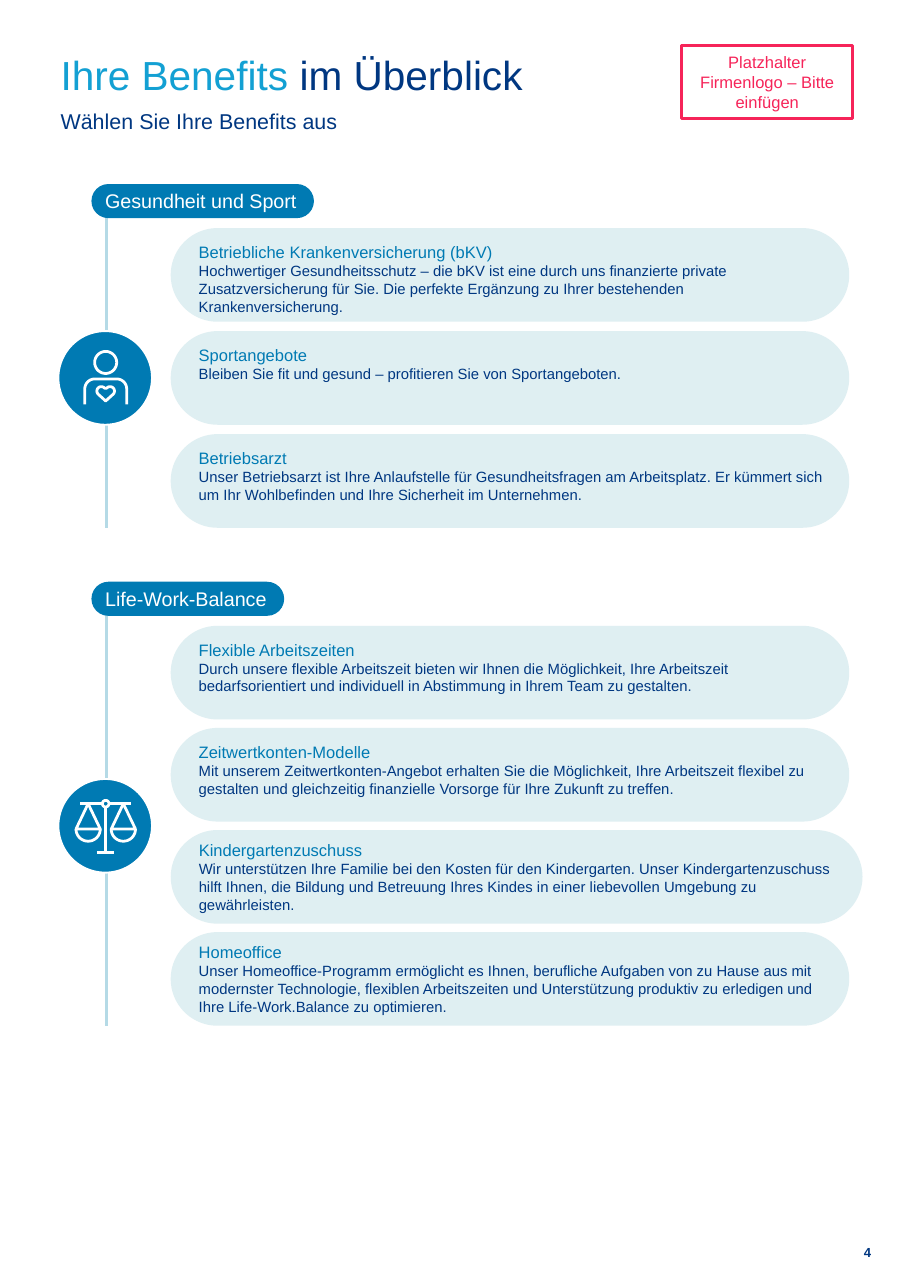
from math import cos, radians, sin

from lxml.etree import SubElement
from pptx import Presentation
from pptx.dml.color import RGBColor
from pptx.enum.shapes import MSO_CONNECTOR, MSO_SHAPE
from pptx.enum.text import MSO_ANCHOR, MSO_AUTO_SIZE, PP_ALIGN
from pptx.oxml.ns import qn
from pptx.util import Inches, Pt

NAVY, BLUE, SKY, WHITE = "003781", "007AB3", "13A0D3", "FFFFFF"
PALE, RAIL, PINK = "DFEFF2", "B5DAE6", "F62459"
CARD_WIDTH, CARD_HEIGHT = 6.16, 0.85

HEALTH_CARDS = [
    ("Betriebliche Krankenversicherung (bKV)",
     "Hochwertiger Gesundheitsschutz – die bKV ist eine durch uns finanzierte private "
     "Zusatzversicherung für Sie. Die perfekte Ergänzung zu Ihrer bestehenden "
     "Krankenversicherung.", CARD_WIDTH, MSO_ANCHOR.TOP),
    ("Sportangebote",
     "Bleiben Sie fit und gesund – profitieren Sie von Sportangeboten.",
     CARD_WIDTH, MSO_ANCHOR.TOP),
    ("Betriebsarzt",
     "Unser Betriebsarzt ist Ihre Anlaufstelle für Gesundheitsfragen am Arbeitsplatz. "
     "Er kümmert sich um Ihr Wohlbefinden und Ihre Sicherheit im Unternehmen.",
     CARD_WIDTH, MSO_ANCHOR.TOP),
]
BALANCE_CARDS = [
    ("Flexible Arbeitszeiten",
     "Durch unsere flexible Arbeitszeit bieten wir Ihnen die Möglichkeit, Ihre Arbeitszeit "
     "bedarfsorientiert und individuell in Abstimmung in Ihrem Team zu gestalten.",
     CARD_WIDTH, MSO_ANCHOR.TOP),
    ("Zeitwertkonten-Modelle",
     "Mit unserem Zeitwertkonten-Angebot erhalten Sie die Möglichkeit, Ihre Arbeitszeit "
     "flexibel zu gestalten und gleichzeitig finanzielle Vorsorge für Ihre Zukunft zu treffen.",
     CARD_WIDTH, MSO_ANCHOR.TOP),
    ("Kindergartenzuschuss",
     "Wir unterstützen Ihre Familie bei den Kosten für den Kindergarten. Unser "
     "Kindergartenzuschuss hilft Ihnen, die Bildung und Betreuung Ihres Kindes in einer "
     "liebevollen Umgebung zu gewährleisten.", 6.28, MSO_ANCHOR.MIDDLE),
    ("Homeoffice",
     "Unser Homeoffice-Programm ermöglicht es Ihnen, berufliche Aufgaben von zu Hause aus "
     "mit modernster Technologie, flexiblen Arbeitszeiten und Unterstützung produktiv zu "
     "erledigen und Ihre Life-Work.Balance zu optimieren.", CARD_WIDTH, MSO_ANCHOR.MIDDLE),
]


def color(value):
    """Turn a hex string into a colour."""
    return RGBColor.from_string(value)


def add_run(paragraph, text, size, hex_color, bold=False):
    """Append one formatted run to a paragraph."""
    run = paragraph.add_run()
    run.text = text
    run.font.name = "Arial"
    run.font.size = Pt(size)
    run.font.bold = bold
    run.font.color.rgb = color(hex_color)


def set_frame(frame, anchor, left=0, right=0, wrap=True):
    """Set anchor, side insets and wrapping, and return the first paragraph."""
    frame.auto_size = MSO_AUTO_SIZE.NONE
    frame.word_wrap = wrap
    frame.vertical_anchor = anchor
    frame.margin_left, frame.margin_right = Inches(left), Inches(right)
    frame.margin_top = frame.margin_bottom = 0
    paragraph = frame.paragraphs[0]
    paragraph.alignment = PP_ALIGN.LEFT
    return paragraph


def style(shape, fill=None, line=None, weight=1):
    """Apply fill and outline without a shadow."""
    shape.shadow.inherit = False
    if fill:
        shape.fill.solid()
        shape.fill.fore_color.rgb = color(fill)
    else:
        shape.fill.background()
    if line:
        shape.line.color.rgb = color(line)
        shape.line.width = Pt(weight)
    else:
        shape.line.fill.background()


def add_shape(slide, kind, left, top, width, height, **look):
    """Add a styled preset shape."""
    shape = slide.shapes.add_shape(kind, Inches(left), Inches(top), Inches(width), Inches(height))
    style(shape, **look)
    if kind == MSO_SHAPE.ROUNDED_RECTANGLE:
        shape.adjustments[0] = 0.5
    return shape


def arc(x, y, radius, start=0, end=360):
    """Return points along an arc, angles clockwise from the right."""
    angles = [radians(start + (end - start) * step / 36) for step in range(37)]
    return [(x + radius * cos(angle), y + radius * sin(angle)) for angle in angles]


def add_icon(slide, x, y, strokes):
    """Draw white outlines around a centre point."""
    for points, closed in strokes:
        corners = [(Inches(x + dx), Inches(y + dy)) for dx, dy in points]
        builder = slide.shapes.build_freeform(*corners[0])
        builder.add_line_segments(corners[1:], close=closed)
        style(builder.convert_to_shape(), line=WHITE, weight=1.8)


def person_strokes():
    """Return the outlines of a person with a heart."""
    body = [(-0.19, 0.24), *arc(-0.1, 0.1, 0.09, 180, 270),
            *arc(0.1, 0.1, 0.09, 270, 360), (0.19, 0.24)]
    heart = [*arc(-0.04, 0.12, 0.04, 135, 320), *arc(0.04, 0.12, 0.04, 220, 405), (0, 0.21)]
    return [(arc(0, -0.14, 0.1), True), (body, False), (heart, True)]


def scale_strokes():
    """Return the outlines of a balance scale."""
    strokes = [(arc(0, -0.2, 0.03), True), ([(0, -0.17), (0, 0.24)], False),
               ([(-0.08, 0.24), (0.08, 0.24)], False)]
    for side in (-1, 1):
        pan = side * 0.16
        strokes += [([(side * 0.03, -0.2), (side * 0.23, -0.2)], False),
                    ([(pan, -0.2), (pan - 0.11, 0.03), (pan + 0.11, 0.03)], True),
                    (arc(pan, 0.03, 0.11, 0, 180), False)]
    return strokes


def add_card(slide, left, top, card):
    """Add one benefit card with heading and description."""
    heading, description, width, anchor = card
    shape = add_shape(slide, MSO_SHAPE.ROUNDED_RECTANGLE, left, top, width, CARD_HEIGHT, fill=PALE)
    paragraph = set_frame(shape.text_frame, anchor, 0.13, 0.08)
    add_run(paragraph, heading, 10.8, BLUE)
    paragraph = shape.text_frame.add_paragraph()
    paragraph.alignment = PP_ALIGN.LEFT
    add_run(paragraph, description, 9.7, NAVY)


def add_section(slide, left, top, bottom, label, label_width, strokes, cards):
    """Add a labelled rail with a badge and evenly spread cards."""
    rail = Inches(left + 0.44)
    connector = slide.shapes.add_connector(
        MSO_CONNECTOR.STRAIGHT, rail, Inches(top + 0.29), rail, Inches(bottom))
    connector.line.color.rgb = color(RAIL)
    connector.line.width = Pt(2)
    SubElement(connector._element.spPr, qn("a:effectLst"))

    pill = add_shape(slide, MSO_SHAPE.ROUNDED_RECTANGLE, left + 0.3, top, label_width, 0.31, fill=BLUE)
    paragraph = set_frame(pill.text_frame, MSO_ANCHOR.MIDDLE, 0.08, 0.08, wrap=False)
    add_run(paragraph, label, 12.9, WHITE)

    first = top + 0.4
    pitch = (bottom - first - CARD_HEIGHT) / (len(cards) - 1)
    for index, card in enumerate(cards):
        add_card(slide, left + 1.02, first + index * pitch, card)

    middle = (first + bottom) / 2
    add_shape(slide, MSO_SHAPE.OVAL, left, middle - 0.85 / 2, 0.85, 0.85, fill=BLUE, line=WHITE, weight=1.25)
    add_icon(slide, left + 0.43, middle, strokes)


def add_header(slide, left, top, width, height):
    """Fill the title and add the logo box at the right."""
    title = slide.shapes.title
    title.left, title.top = Inches(left), Inches(top)
    title.width, title.height = Inches(width), Inches(height)
    paragraph = set_frame(title.text_frame, MSO_ANCHOR.TOP)
    paragraph.line_spacing = Pt(23.1)
    add_run(paragraph, "Ihre Benefits ", 26.5, SKY)
    add_run(paragraph, "im Überblick", 26.5, NAVY)
    paragraph.add_line_break()
    add_run(paragraph, "Wählen Sie Ihre Benefits aus", 14, NAVY)

    logo = add_shape(slide, MSO_SHAPE.RECTANGLE, left + 5.64, top - 0.16, 1.55, 0.67, line=PINK, weight=2)
    paragraph = set_frame(logo.text_frame, MSO_ANCHOR.MIDDLE, 0.1, 0.1)
    paragraph.alignment = PP_ALIGN.CENTER
    add_run(paragraph, "Platzhalter", 10.8, PINK)
    paragraph.add_line_break()
    add_run(paragraph, "Firmenlogo – Bitte einfügen", 10.8, PINK)


def add_page_number(slide, left, top, width, height):
    """Add the page number."""
    box = slide.shapes.add_textbox(Inches(left), Inches(top), Inches(width), Inches(height))
    paragraph = set_frame(box.text_frame, MSO_ANCHOR.MIDDLE)
    paragraph.alignment = PP_ALIGN.RIGHT
    paragraph.line_spacing = Pt(10.8)
    add_run(paragraph, "4", 8.6, NAVY, bold=True)


def main():
    """Build and save the benefits overview."""
    presentation = Presentation()
    presentation.slide_width, presentation.slide_height = Inches(8.27), Inches(11.69)
    slide = presentation.slides.add_slide(presentation.slide_layouts[5])
    add_header(slide, 0.55, 0.57, 6.12, 0.67)
    add_section(slide, 0.53, 1.67, 4.79, "Gesundheit und Sport", 2.02, person_strokes(), HEALTH_CARDS)
    add_section(slide, 0.53, 5.28, 9.31, "Life-Work-Balance", 1.75, scale_strokes(), BALANCE_CARDS)
    add_page_number(slide, 7.59, 11.28, 0.32, 0.17)
    presentation.save("out.pptx")


if __name__ == "__main__":
    main()
